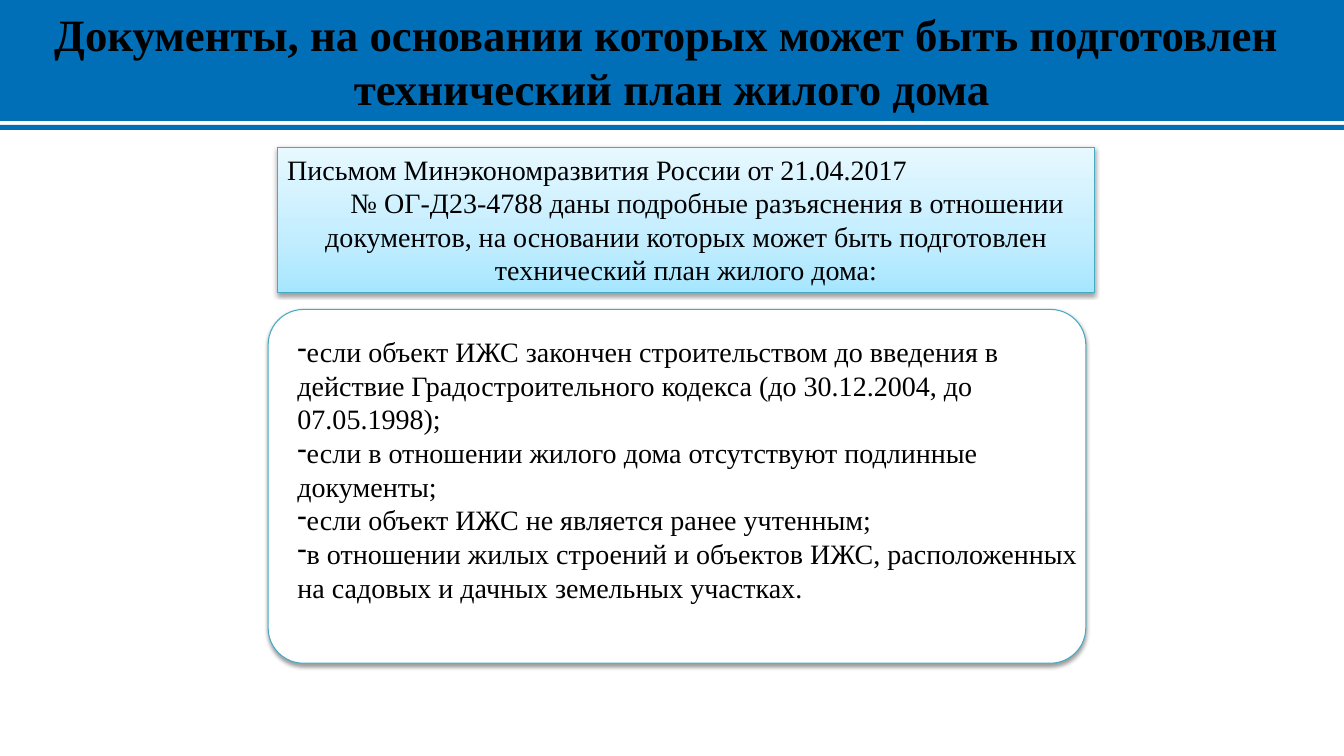
from copy import deepcopy
from dataclasses import dataclass

from lxml import etree
from pptx import Presentation
from pptx import util as u
from pptx.dml.color import RGBColor
from pptx.enum import shapes, text
from pptx.oxml import ns

BLACK = RGBColor(0x00, 0x00, 0x00)
WHITE = RGBColor(0xFF, 0xFF, 0xFF)
BLUE = RGBColor(0x00, 0x6F, 0xB8)
TEAL = RGBColor(0x46, 0xAA, 0xC5)
SKY_STOPS = (
    (0, RGBColor(0xA7, 0xE6, 0xFF)),
    (0.35, RGBColor(0xC1, 0xED, 0xFF)),
    (1, RGBColor(0xE7, 0xF8, 0xFF)),
)
FONT = "Times New Roman"
SLIDE_W, SLIDE_H = u.Inches(13.33), u.Inches(7.5)
LEFT, CENTER = text.PP_ALIGN.LEFT, text.PP_ALIGN.CENTER
RECT = shapes.MSO_SHAPE.RECTANGLE
ROUNDED = shapes.MSO_SHAPE.ROUNDED_RECTANGLE


@dataclass(frozen=True)
class Area:
    """Place and size in percent of the slide's width and height."""
    left: float
    top: float
    width: float
    height: float

    def emu(self) -> tuple[int, int, int, int]:
        return (int(SLIDE_W * self.left / 100), int(SLIDE_H * self.top / 100),
                int(SLIDE_W * self.width / 100), int(SLIDE_H * self.height / 100))


@dataclass(frozen=True)
class Para:
    words: str
    align: text.PP_ALIGN = LEFT
    indent: float = 0
    bullet: str = ""


LETTER = (
    Para("Письмом Минэкономразвития России от 21.04.2017"),
    Para("№ ОГ-Д23-4788 даны подробные разъяснения в отношении документов, на основании "
         "которых может быть подготовлен технический план жилого дома:", CENTER, 0.42),
)
CASES = tuple(Para(words, bullet="-") for words in (
    "если объект ИЖС закончен строительством до введения в действие "
    "Градостроительного кодекса (до 30.12.2004, до 07.05.1998);",
    "если в отношении жилого дома отсутствуют подлинные документы;",
    "если объект ИЖС не является ранее учтенным;",
    "в отношении жилых строений и объектов ИЖС, расположенных на садовых "
    "и дачных земельных участках.",
))
TITLE = (
    Para("Документы, на основании которых может быть подготовлен ", CENTER),
    Para("технический план жилого дома", CENTER),
)


def add_panel(slide, kind, area: Area, fill: RGBColor):
    sp = slide.shapes.add_shape(kind, *area.emu())
    sp.shadow.inherit = False
    sp.fill.solid()
    sp.fill.fore_color.rgb = fill
    sp.line.fill.background()
    return sp


def outline_with_shadow(sp) -> None:
    sp.line.color.rgb = TEAL
    sp.line.width = u.Pt(0.75)
    effects = sp._element.spPr.find(ns.qn("a:effectLst"))
    shadow = etree.SubElement(effects, ns.qn("a:outerShdw"), blurRad=str(u.Pt(3.1)),
                              dist=str(u.Pt(1.6)), dir="5400000", rotWithShape="0")
    color = etree.SubElement(shadow, ns.qn("a:srgbClr"), val=str(BLACK))
    etree.SubElement(color, ns.qn("a:alpha"), val="38000")


def fill_with_sky(sp) -> None:
    sp.fill.gradient()
    sp.fill.gradient_angle = 90
    stop_list = sp._element.spPr.find(".//" + ns.qn("a:gsLst"))
    while len(stop_list) < len(SKY_STOPS):
        stop_list.append(deepcopy(stop_list[-1]))
    for stop, (position, color) in zip(sp.fill.gradient_stops, SKY_STOPS):
        stop.position = position
        stop.color.rgb = color


def write(sp, paras: tuple[Para, ...], size: int, anchor: text.MSO_ANCHOR,
          bold: bool = False, wrap: bool = True) -> None:
    tf = sp.text_frame
    tf.word_wrap = wrap
    tf.vertical_anchor = anchor
    for i, para in enumerate(paras):
        p = tf.add_paragraph() if i else tf.paragraphs[0]
        p.alignment = para.align
        props = p._p.get_or_add_pPr()
        props.set("marL", "0")
        props.set("indent", str(u.Inches(para.indent)))
        if para.bullet:
            etree.SubElement(props, ns.qn("a:buFontTx"))
            etree.SubElement(props, ns.qn("a:buChar"), char=para.bullet)
        r = p.add_run()
        r.text = para.words
        r.font.name = FONT
        r.font.size = u.Pt(size)
        r.font.bold = bold
        r.font.color.rgb = BLACK


def main() -> None:
    prs = Presentation()
    prs.slide_width, prs.slide_height = SLIDE_W, SLIDE_H
    slide = prs.slides.add_slide(prs.slide_layouts[6])

    letter = add_panel(slide, RECT, Area(20.63, 19.47, 60.84, 19.2), WHITE)
    fill_with_sky(letter)
    outline_with_shadow(letter)
    write(letter, LETTER, 20, text.MSO_ANCHOR.TOP)

    card = add_panel(slide, ROUNDED, Area(19.95, 40.93, 60.84, 46.8), WHITE)
    card.adjustments[0] = 0.1
    outline_with_shadow(card)

    cases = slide.shapes.add_textbox(*Area(21.53, 40.93, 59.94, 42.27).emu())
    tf = cases.text_frame
    tf.margin_left = tf.margin_top = tf.margin_right = tf.margin_bottom = u.Inches(0.08)
    write(cases, CASES, 20, text.MSO_ANCHOR.MIDDLE)

    add_panel(slide, RECT, Area(0, 16.53, 100, 0.67), BLUE)
    header = add_panel(slide, RECT, Area(0, 0, 100, 16), BLUE)
    write(header, TITLE, 32, text.MSO_ANCHOR.MIDDLE, bold=True, wrap=False)

    prs.save("out.pptx")


if __name__ == "__main__":
    main()
